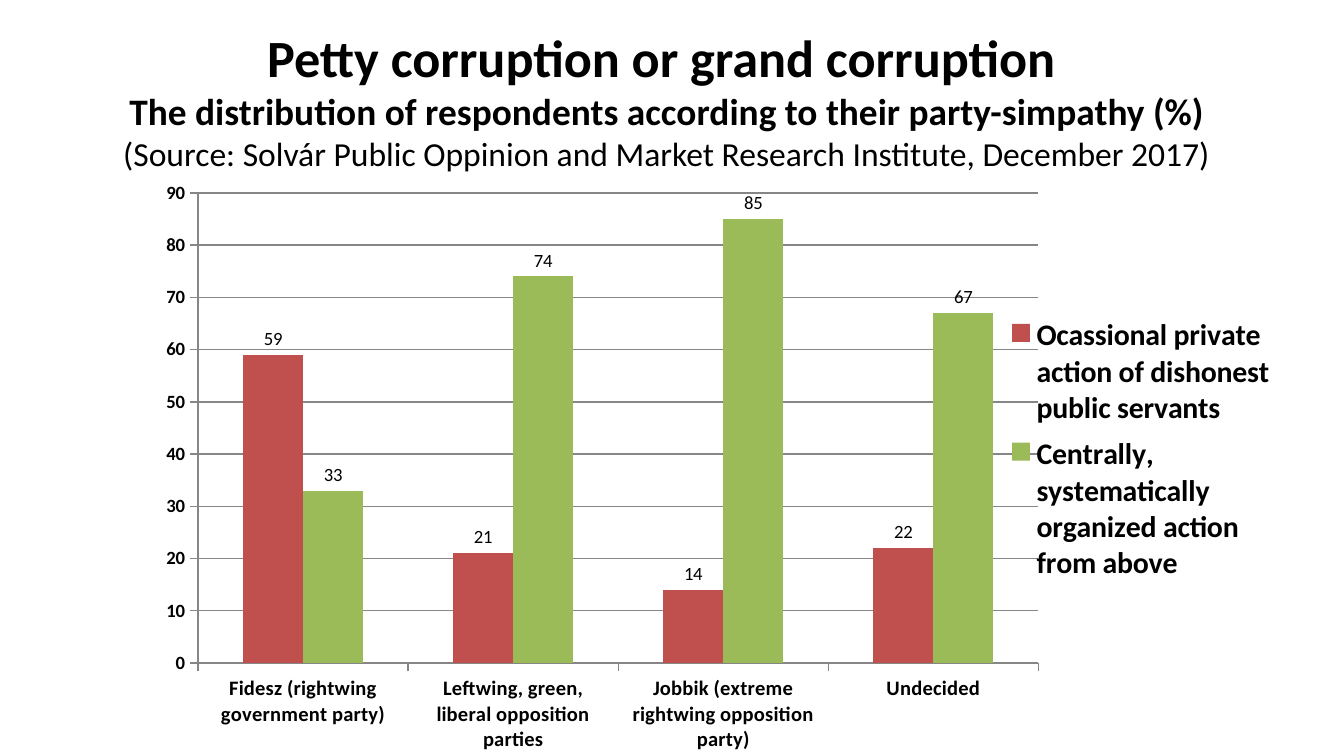
from collections import namedtuple

from lxml.etree import SubElement
from pptx import Presentation
from pptx.chart.data import CategoryChartData
from pptx.dml.color import RGBColor
from pptx.enum.chart import XL_CHART_TYPE as ChartType
from pptx.enum.chart import XL_LABEL_POSITION as LabelPosition
from pptx.enum.chart import XL_LEGEND_POSITION as LegendPosition
from pptx.enum.chart import XL_TICK_MARK as TickMark
from pptx.enum.text import MSO_ANCHOR as Anchor
from pptx.enum.text import MSO_AUTO_SIZE as AutoSize
from pptx.enum.text import PP_ALIGN as Align
from pptx.oxml import parse_xml
from pptx.oxml.ns import nsdecls, qn
from pptx.util import Pt

PX = 6804
BLACK = RGBColor(0x00, 0x00, 0x00)
GRAY = RGBColor(0x86, 0x86, 0x86)
RED = RGBColor(0xC0, 0x50, 0x4D)
GREEN = RGBColor(0x9B, 0xBB, 0x59)
FONT = "Calibri"

Box = namedtuple("Box", "left top width height")

HEADING = [
    ("Petty corruption or grand corruption ", 28, True),
    ("The distribution of respondents according to their party-simpathy (%)", 20, True),
    ("(Source: Solvár Public Oppinion and Market Research Institute, December 2017)", 18, False),
]
PARTIES = [
    "Fidesz (rightwing government party)",
    "Leftwing, green, liberal opposition parties",
    "Jobbik (extreme rightwing opposition party)",
    "Undecided",
]
ANSWERS = [
    ("Ocassional private action of dishonest public servants", [59, 21, 14, 22], RED),
    ("Centrally, systematically organized action from above", [33, 74, 85, 67], GREEN),
]


def apply_format(target, values):
    for name, value in values.items():
        setattr(target, name, value)


def format_font(font, size, bold):
    apply_format(font, {"name": FONT, "size": Pt(size), "bold": bold})
    font.color.rgb = BLACK


def format_line(line):
    line.color.rgb = GRAY
    line.width = Pt(0.75)


def place_layout(element, area, inner=False):
    layout = element.find(qn("c:layout"))
    if layout is None:
        layout = parse_xml(f"<c:layout {nsdecls('c')}/>")
        position = element.find(qn("c:legendPos"))
        if position is None:
            element.insert(0, layout)
        else:
            position.addnext(layout)
    for child in list(layout):
        layout.remove(child)
    manual = SubElement(layout, qn("c:manualLayout"))
    values = {"xMode": "edge", "yMode": "edge"}
    if inner:
        values = {"layoutTarget": "inner", **values}
    values.update(zip("xywh", area))
    for name, value in values.items():
        SubElement(manual, qn(f"c:{name}")).set("val", str(value))


def build_heading(page, box):
    title = page.shapes.title
    apply_format(title, {name: value * PX for name, value in box._asdict().items()})
    frame = title.text_frame
    apply_format(frame, {
        "word_wrap": True,
        "auto_size": AutoSize.SHAPE_TO_FIT_TEXT,
        "vertical_anchor": Anchor.TOP,
    })
    for index, (text, size, bold) in enumerate(HEADING):
        para = frame.add_paragraph() if index else frame.paragraphs[0]
        apply_format(para, {"alignment": Align.CENTER, "space_before": Pt(0)})
        span = para.add_run()
        span.text = text
        format_font(span.font, size, bold)


def build_axes(chart):
    for axis, size in ((chart.category_axis, 11), (chart.value_axis, 10)):
        apply_format(axis, {
            "major_tick_mark": TickMark.OUTSIDE,
            "minor_tick_mark": TickMark.NONE,
        })
        format_font(axis.tick_labels.font, size, True)
        format_line(axis.format.line)
    apply_format(chart.value_axis, {
        "minimum_scale": 0,
        "maximum_scale": 90,
        "major_unit": 10,
        "has_major_gridlines": True,
    })
    format_line(chart.value_axis.major_gridlines.format.line)


def build_series(plot):
    apply_format(plot, {"gap_width": 150, "overlap": 0, "vary_by_categories": False})
    for series, (_, _, color) in zip(plot.series, ANSWERS):
        series.format.fill.solid()
        series.format.fill.fore_color.rgb = color
        labels = series.data_labels
        apply_format(labels, {"show_value": True, "position": LabelPosition.OUTSIDE_END})
        format_font(labels.font, 10, False)


def build_chart(page, box):
    data = CategoryChartData()
    data.categories = PARTIES
    for name, values, _ in ANSWERS:
        data.add_series(name, values)
    frame = page.shapes.add_chart(
        ChartType.COLUMN_CLUSTERED, *(value * PX for value in box), data
    )
    chart = frame.chart
    apply_format(chart, {"has_title": False, "has_legend": True})
    format_font(chart.font, 10, False)
    build_axes(chart)
    build_series(chart.plots[0])
    legend = chart.legend
    apply_format(legend, {"position": LegendPosition.RIGHT, "include_in_layout": False})
    format_font(legend.font, 16, True)
    space = chart.element
    body = space.find(qn("c:chart"))
    place_layout(body.find(qn("c:plotArea")), (0.106, 0.044, 0.69, 0.797), inner=True)
    place_layout(body.find(qn("c:legend")), (0.77, 0.24, 0.22, 0.48))
    body.addnext(parse_xml(
        f"<c:spPr {nsdecls('c', 'a')}><a:noFill/><a:ln><a:noFill/></a:ln></c:spPr>"
    ))


def main():
    deck = Presentation()
    apply_format(deck, {"slide_width": 1344 * PX, "slide_height": 756 * PX})
    page = deck.slides.add_slide(deck.slide_layouts[5])
    build_heading(page, Box(58, 19, 1218, 163))
    build_chart(page, Box(69, 167, 1218, 590))
    deck.save("out.pptx")


if __name__ == "__main__":
    main()
